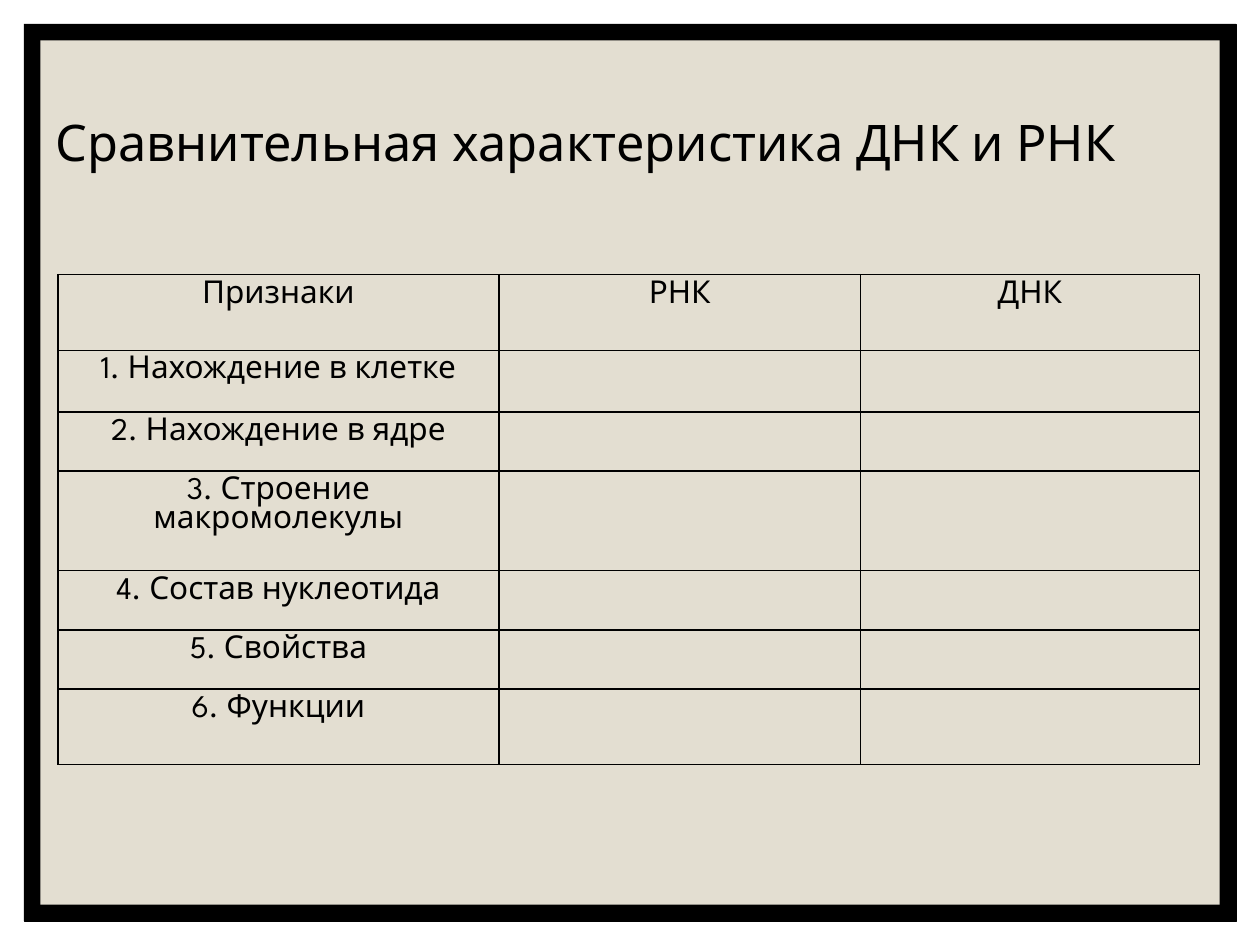
from lxml import etree
from pptx import Presentation
from pptx.dml.color import RGBColor as RGB
from pptx.enum.shapes import MSO_SHAPE as Shape
from pptx.enum.text import MSO_ANCHOR as Anchor, MSO_AUTO_SIZE as AutoSize, PP_ALIGN as Align
from pptx.oxml.ns import qn
from pptx.util import Inches, Pt

COLORS = {"ink": "000000", "paper": "E3DED1", "back": "FFFFFF"}
FONT = "League Spartan"
COLUMNS = [3.5, 2.87, 2.69]
ROWS = [0.6, 0.49, 0.47, 0.79, 0.47, 0.47, 0.6]
HEADERS = ["Признаки", "РНК", "ДНК"]
FEATURES = ["Нахождение в клетке", "Нахождение в ядре", "Строение макромолекулы",
            "Состав нуклеотида", "Свойства", "Функции"]


def color(name):
    return RGB.from_string(COLORS[name])


def style_text(p, size, align):
    p.alignment = align
    for r in p.runs:
        r.font.name = FONT
        r.font.size = Pt(size)
        r.font.bold = False
        r.font.color.rgb = color("ink")


def add_frame(s, box, border):
    x, y, w, h = box
    for inset, fill in ((0, "ink"), (border, "paper")):
        sp = s.shapes.add_shape(Shape.RECTANGLE, Inches(x + inset), Inches(y + inset),
                                Inches(w - 2 * inset), Inches(h - 2 * inset))
        sp.shadow.inherit = False
        sp.fill.solid()
        sp.fill.fore_color.rgb = color(fill)
        if inset:
            sp.line.fill.background()
        else:
            sp.line.color.rgb = color("ink")
            sp.line.width = Pt(0.5)


def place_title(s, box, text):
    sp = s.shapes.title
    sp.left, sp.top, sp.width, sp.height = map(Inches, box)
    s.shapes._spTree.append(sp._element)
    tf = sp.text_frame
    tf.text = text
    tf.word_wrap = True
    tf.auto_size = AutoSize.NONE
    tf.vertical_anchor = Anchor.MIDDLE
    p = tf.paragraphs[0]
    p.line_spacing = 0.9
    style_text(p, 28.8, Align.LEFT)


def set_borders(cell):
    props = cell._tc.get_or_add_tcPr()
    for i, side in enumerate(("a:lnL", "a:lnR", "a:lnT", "a:lnB")):
        ln = etree.Element(qn(side), w=str(Pt(1)))
        fill = etree.SubElement(ln, qn("a:solidFill"))
        etree.SubElement(fill, qn("a:srgbClr"), val=COLORS["ink"])
        props.insert(i, ln)


def add_comparison(s, box):
    table = s.shapes.add_table(len(ROWS), len(COLUMNS), *map(Inches, box)).table
    table.first_row = table.horz_banding = False
    for col, width in zip(table.columns, COLUMNS):
        col.width = Inches(width)
    for row, height in zip(table.rows, ROWS):
        row.height = Inches(height)
    for cell in table.iter_cells():
        cell.fill.background()
        set_borders(cell)
    for i, text in enumerate(HEADERS):
        table.cell(0, i).text = text
    for i, text in enumerate(FEATURES, 1):
        table.cell(i, 0).text = f"{i}. {text}"
    for cell in table.iter_cells():
        style_text(cell.text_frame.paragraphs[0], 18, Align.CENTER)


def main():
    prs = Presentation()
    prs.slide_width, prs.slide_height = Inches(10), Inches(7.5)
    s = prs.slides.add_slide(prs.slide_layouts[5])
    s.background.fill.solid()
    s.background.fill.fore_color.rgb = color("back")
    add_frame(s, (0.19, 0.19, 9.62, 7.12), 0.13)
    place_title(s, (0.34, 0.68, 9.29, 0.95), "Сравнительная характеристика ДНК и РНК")
    add_comparison(s, (0.46, 2.18, sum(COLUMNS), sum(ROWS)))
    prs.save("out.pptx")


if __name__ == "__main__":
    main()
